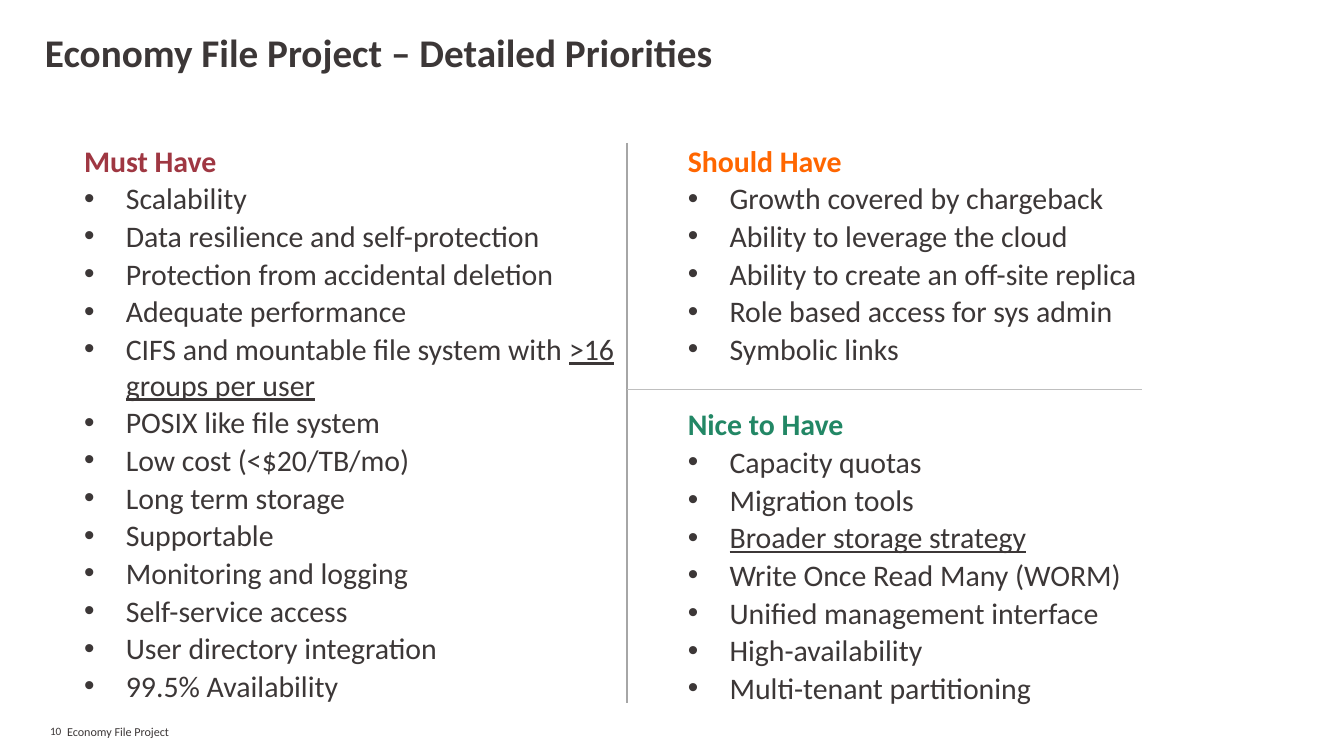
from lxml import etree
from pptx import Presentation
from pptx.dml.color import RGBColor
from pptx.enum.shapes import MSO_CONNECTOR as Connector
from pptx.enum.text import MSO_ANCHOR as Anchor, PP_ALIGN as Align
from pptx.oxml.ns import qn
from pptx.util import Cm, Pt

COLORS = {
    "text": "3C3737",
    "must": "9F3742",
    "should": "FF6600",
    "nice": "228765",
    "vertical": "A6A6A6",
    "horizontal": "BFBFBF",
}
INDENT = Cm(0.79)
LINE_GAP = Pt(1)
SECTION_GAP = Pt(21.2)

presentation = Presentation()
presentation.slide_width = Cm(25.4)
presentation.slide_height = Cm(14.29)
slide = presentation.slides.add_slide(presentation.slide_layouts[6])


def add_box(left, top, width, height, anchor=Anchor.TOP):
    frame = slide.shapes.add_textbox(Cm(left), Cm(top), Cm(width), Cm(height)).text_frame
    frame.margin_left = frame.margin_top = frame.margin_right = frame.margin_bottom = 0
    frame.word_wrap = True
    frame.vertical_anchor = anchor
    return frame


def add_text(paragraph, text, size=16, color="text", bold=False, underline=False):
    run = paragraph.add_run()
    run.text = text
    font = run.font
    font.name = "Calibri"
    font.size = Pt(size)
    font.bold = bold
    font.underline = underline
    font.color.rgb = RGBColor.from_string(COLORS[color])


page_number = add_box(0.55, 13.7, 0.61, 0.33).paragraphs[0]
page_number.alignment = Align.RIGHT
add_text(page_number, "10", size=6)

title = add_box(0.85, 0.53, 23.67, 0.84).paragraphs[0]
add_text(title, "Economy File Project – Detailed Priorities", size=21, bold=True)

columns = [
    (1.59, 10.06, [
        ("Must Have", "must", [
            "Scalability",
            "Data resilience and self-protection",
            "Protection from accidental deletion",
            "Adequate performance",
            ("CIFS and mountable file system with ", ">16 groups per user"),
            "POSIX like file system",
            "Low cost (<$20/TB/mo)",
            "Long term storage",
            "Supportable",
            "Monitoring and logging",
            "Self-service access",
            "User directory integration",
            "99.5% Availability",
        ]),
    ]),
    (13.0, 11.53, [
        ("Should Have", "should", [
            "Growth covered by chargeback",
            "Ability to leverage the cloud",
            "Ability to create an off-site replica",
            "Role based access for sys admin",
            "Symbolic links",
        ]),
        ("Nice to Have", "nice", [
            "Capacity quotas",
            "Migration tools",
            ("", "Broader storage strategy"),
            "Write Once Read Many (WORM)",
            "Unified management interface",
            "High-availability",
            "Multi-tenant partitioning",
        ]),
    ]),
]

for left, width, sections in columns:
    frame = add_box(left, 2.69, width, 10.08)
    for index, (heading, color, items) in enumerate(sections):
        if index == 0:
            paragraph = frame.paragraphs[0]
        else:
            paragraph = frame.add_paragraph()
            paragraph.space_before = SECTION_GAP
        add_text(paragraph, heading, color=color, bold=True)
        for item in items:
            plain, underlined = (item, "") if isinstance(item, str) else item
            paragraph = frame.add_paragraph()
            properties = paragraph._p.get_or_add_pPr()
            properties.set("marL", str(INDENT))
            properties.set("indent", str(-INDENT))
            etree.SubElement(properties, qn("a:buFont")).set("typeface", "Arial")
            etree.SubElement(properties, qn("a:buChar")).set("char", "•")
            paragraph.space_before = LINE_GAP
            if plain:
                add_text(paragraph, plain)
            if underlined:
                add_text(paragraph, underlined, underline=True)

footer = add_box(1.27, 13.67, 17.12, 0.33, Anchor.MIDDLE)
footer.margin_right = Cm(0.25)
add_text(footer.paragraphs[0], "Economy File Project", size=6.5)

dividers = [
    (11.85, 2.7, 11.85, 13.28, "vertical"),
    (11.85, 7.36, 21.59, 7.36, "horizontal"),
]
for start_x, start_y, end_x, end_y, color in dividers:
    divider = slide.shapes.add_connector(
        Connector.STRAIGHT, Cm(start_x), Cm(start_y), Cm(end_x), Cm(end_y))
    divider.line.color.rgb = RGBColor.from_string(COLORS[color])
    divider.line.width = Pt(0.75)
    etree.SubElement(divider._element.spPr, qn("a:effectLst"))

presentation.save("out.pptx")
